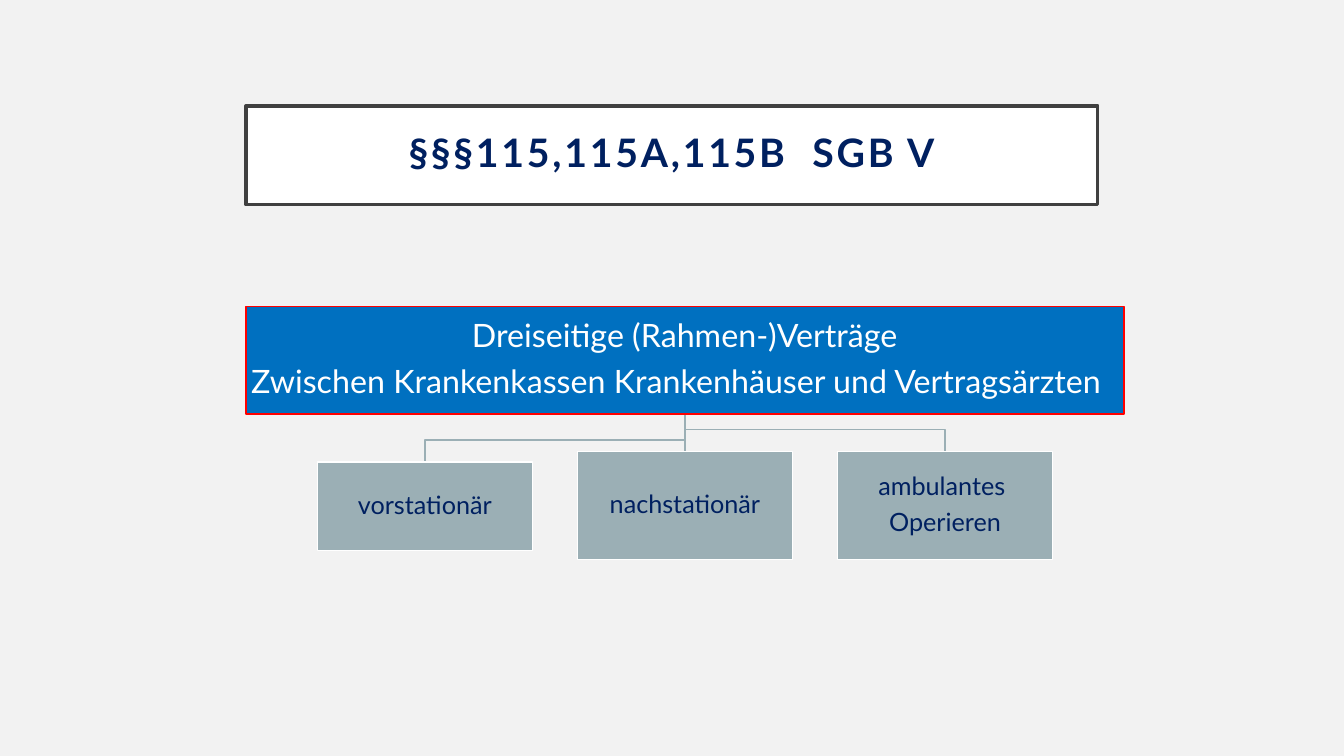
"""Build a slide showing the three-party contracts under SGB V as a small tree."""
from pptx import Presentation
from pptx.dml.color import RGBColor
from pptx.enum import shapes, text
from pptx.oxml import ns
from pptx.util import Pt
from lxml import etree


class Theme:
    font = "Lato"
    background = RGBColor(0xF2, 0xF2, 0xF2)
    white = RGBColor(0xFF, 0xFF, 0xFF)
    navy = RGBColor(0x00, 0x20, 0x60)
    frame = RGBColor(0x40, 0x40, 0x40)
    blue = RGBColor(0x00, 0x70, 0xC0)
    red = RGBColor(0xFF, 0x00, 0x00)
    grey = RGBColor(0x9B, 0xAF, 0xB5)
    title_size, root_size, branch_size = 28, 23, 18


def add_box(s, x, y, w, h, lines, fill, line, line_width, size, color, inset, after=0.35):
    """Add a filled rectangle with centred text and return it."""
    sp = s.shapes.add_shape(shapes.MSO_SHAPE.RECTANGLE, Pt(x), Pt(y), Pt(w), Pt(h))
    sp.shadow.inherit = False
    sp.fill.solid()
    sp.fill.fore_color.rgb = fill
    sp.line.color.rgb = line
    sp.line.width = Pt(line_width)
    tf = sp.text_frame
    tf.word_wrap = True
    tf.vertical_anchor = text.MSO_ANCHOR.MIDDLE
    tf.margin_left = tf.margin_right = tf.margin_top = tf.margin_bottom = Pt(inset)
    tf.text = "\n".join(lines)
    for p in tf.paragraphs:
        p.alignment = text.PP_ALIGN.CENTER
        p.line_spacing = 0.9
        p.space_after = Pt(round(size * after))
        for r in p.runs:
            r.font.name = Theme.font
            r.font.size = Pt(size)
            r.font.color.rgb = color
    return sp


prs = Presentation()
prs.slide_width, prs.slide_height = Pt(960), Pt(540)
s = prs.slides.add_slide(prs.slide_layouts[6])
s.background.fill.solid()
s.background.fill.fore_color.rgb = Theme.background

title = add_box(s, 175.7, 75.6, 608.4, 70.6, ["§§§115,115A,115B  SGB V"], Theme.white,
                Theme.frame, 2.5, Theme.title_size, Theme.navy, 14.4, after=0)
r = title.text_frame.paragraphs[0].runs[0]
r.font.bold = True
r.font._element.set("spc", "200")

root_x, root_y, root_w, root_h = 175.7, 218.9, 627.2, 77
root_center, root_bottom = root_x + root_w / 2, root_y + root_h
branch_w, branch_step, bend_gap = 153.4, 185.8, 15.8
branches = [
    (["vorstationär"], 330, 63.4),
    (["nachstationär"], 322.6, 77),
    (["ambulantes ", "Operieren"], 322.6, 77),
]

for i, (lines, top, height) in enumerate(branches):
    center = root_center + (i - 1) * branch_step
    if center == root_center:
        link = s.shapes.add_connector(shapes.MSO_CONNECTOR.STRAIGHT, Pt(center),
                                      Pt(root_bottom), Pt(center), Pt(top))
        etree.SubElement(link._element.spPr, ns.qn("a:effectLst"))
    else:
        bend = top - bend_gap
        builder = s.shapes.build_freeform(Pt(root_center), Pt(root_bottom))
        builder.add_line_segments([(Pt(root_center), Pt(bend)), (Pt(center), Pt(bend)),
                                   (Pt(center), Pt(top))], close=False)
        link = builder.convert_to_shape()
        link.shadow.inherit = False
        link.fill.background()
    link.line.color.rgb = Theme.grey
    link.line.width = Pt(1)
    add_box(s, center - branch_w / 2, top, branch_w, height, lines, Theme.grey,
            Theme.white, 1, Theme.branch_size, Theme.navy, 0.7)

add_box(s, root_x, root_y, root_w, root_h,
        ["Dreiseitige (Rahmen-)Verträge",
         "Zwischen Krankenkassen Krankenhäuser und Vertragsärzten  "],
        Theme.blue, Theme.red, 1, Theme.root_size, Theme.white, 1.4)

prs.save("out.pptx")
